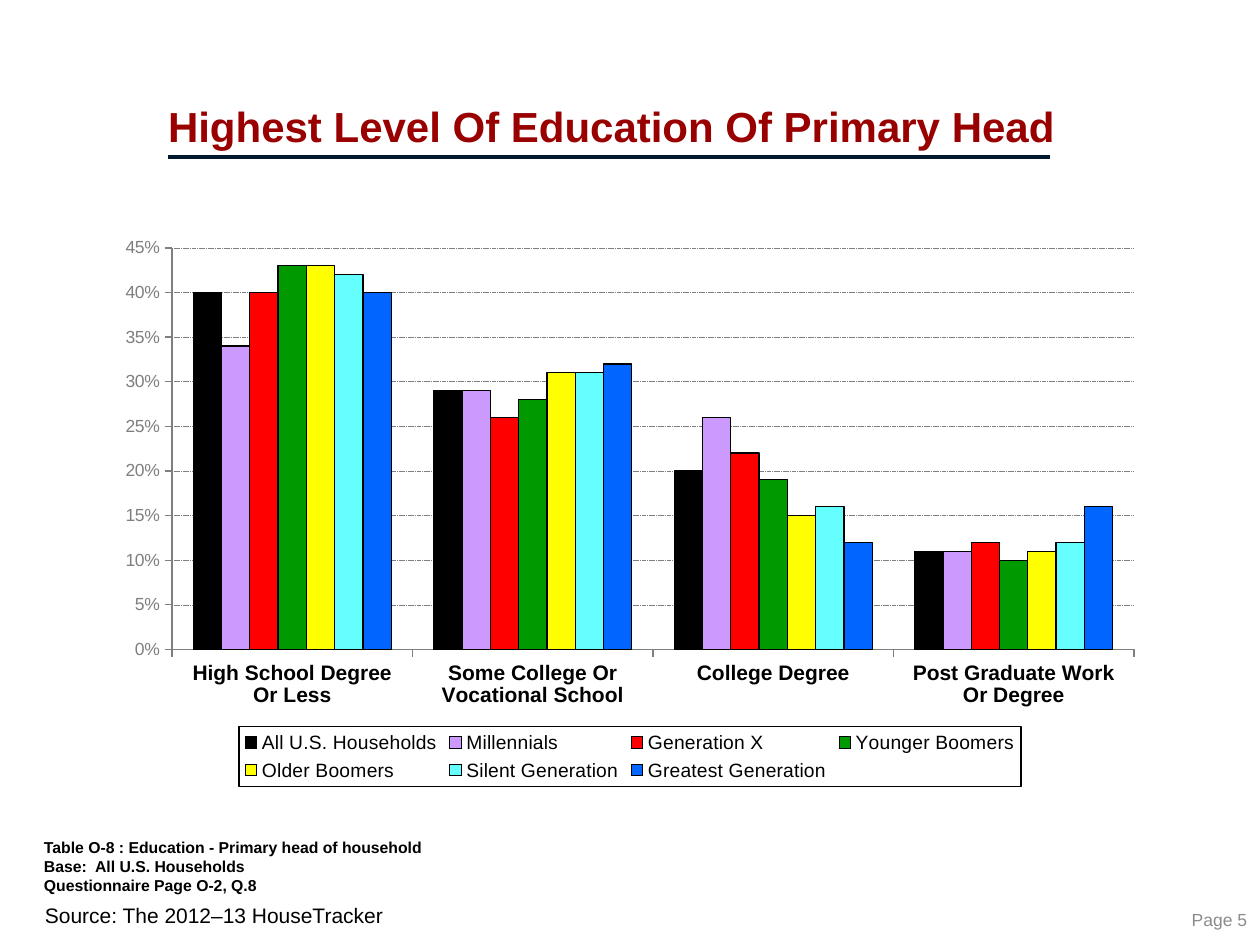
from lxml import etree
from pptx import Presentation
from pptx.chart.data import CategoryChartData
from pptx.dml.color import RGBColor
from pptx.enum.chart import XL_CHART_TYPE as Kind, XL_LEGEND_POSITION as Spot, XL_TICK_MARK as Tick
from pptx.enum.dml import MSO_LINE as Dash
from pptx.enum.shapes import MSO_CONNECTOR as Link
from pptx.enum.text import MSO_ANCHOR as Anchor, MSO_AUTO_SIZE as Fit, PP_ALIGN as Align
from pptx.oxml.ns import qn
from pptx.util import Emu, Pt

FONT = "Arial"
HUES = {"title": "990000", "rule": "00192F", "text": "000000", "axis": "7F7F7F", "page": "8C8C8C"}
TITLE = "Highest Level Of Education Of Primary Head"
NOTES = [
    "Table O-8 : Education - Primary head of household",
    "Base:  All U.S. Households",
    "Questionnaire Page O-2, Q.8",
]
SOURCE = "Source: The 2012–13 HouseTracker"
PAGE = "Page 5"
CATS = [
    "High School Degree Or Less",
    "Some College Or Vocational School",
    "College Degree",
    "Post Graduate Work Or Degree",
]
SERIES = [
    ("All U.S. Households", "000000", (0.40, 0.29, 0.20, 0.11)),
    ("Millennials", "CC99FF", (0.34, 0.29, 0.26, 0.11)),
    ("Generation X", "FF0000", (0.40, 0.26, 0.22, 0.12)),
    ("Younger Boomers", "009900", (0.43, 0.28, 0.19, 0.10)),
    ("Older Boomers", "FFFF00", (0.43, 0.31, 0.15, 0.11)),
    ("Silent Generation", "66FFFF", (0.42, 0.31, 0.16, 0.12)),
    ("Greatest Generation", "0066FF", (0.40, 0.32, 0.12, 0.16)),
]
CHART = (105, 228, 1050, 559)
PLOT = (172, 248, 962, 402)
LEGEND = (239, 727, 782, 60)
SCALE = 914400 / 126


def px(*nums):
    return [Emu(round(n * SCALE)) for n in nums]


def hue(code):
    return RGBColor.from_string(code)


def style(font, size, color, bold=False):
    font.name, font.size, font.bold = FONT, Pt(size), bold
    font.color.rgb = hue(color)


def stroke(line, color, width):
    line.color.rgb = hue(color)
    line.width = Pt(width)


def write(box, text, size, color, bold=False, wrap=True, anchor=Anchor.TOP,
          align=Align.LEFT, pads=(13, 6, 13, 6)):
    frame = box.text_frame
    frame.text = text
    frame.auto_size = Fit.NONE
    frame.word_wrap = wrap
    frame.vertical_anchor = anchor
    (frame.margin_left, frame.margin_top,
     frame.margin_right, frame.margin_bottom) = px(*pads)
    para = frame.paragraphs[0]
    para.alignment = align
    for run in para.runs:
        style(run.font, size, color, bold)
    return para


def place(part, area, inner=False):
    for old in part.findall(qn("c:layout")):
        part.remove(old)
    layout = etree.Element(qn("c:layout"))
    manual = etree.SubElement(layout, qn("c:manualLayout"))
    x, y, w, h = CHART
    rules = [("layoutTarget", "inner")] if inner else []
    rules += [("xMode", "edge"), ("yMode", "edge")]
    rules += zip("xywh", ((area[0] - x) / w, (area[1] - y) / h, area[2] / w, area[3] / h))
    for tag, val in rules:
        etree.SubElement(manual, qn("c:" + tag)).set("val", str(val))
    part.insert(0 if inner else 1, layout)


def draw(slide):
    data = CategoryChartData(number_format="0%")
    data.categories = CATS
    for name, _, vals in SERIES:
        data.add_series(name, vals)
    chart = slide.shapes.add_chart(Kind.COLUMN_CLUSTERED, *px(*CHART), data).chart
    chart.has_title = False
    style(chart.font, 10, HUES["text"])

    plot = chart.plots[0]
    plot.gap_width, plot.overlap, plot.vary_by_categories = 150, 0, False
    for bar, (_, color, _) in zip(plot.series, SERIES):
        bar.format.fill.solid()
        bar.format.fill.fore_color.rgb = hue(color)
        bar.invert_if_negative = False
        stroke(bar.format.line, HUES["text"], 0.75)

    cat, val = chart.category_axis, chart.value_axis
    style(cat.tick_labels.font, 12, HUES["text"], True)
    style(val.tick_labels.font, 10, HUES["axis"])
    for axis in (cat, val):
        axis.major_tick_mark = Tick.OUTSIDE
        stroke(axis.format.line, HUES["axis"], 0.75)
    val.minimum_scale, val.maximum_scale, val.major_unit = 0, 0.45, 0.05
    val.tick_labels.number_format = "0%"
    val.tick_labels.number_format_is_linked = False
    grid = val.major_gridlines.format.line
    stroke(grid, HUES["axis"], 0.25)
    grid.dash_style = Dash.SQUARE_DOT

    chart.has_legend = True
    key = chart.legend
    key.position, key.include_in_layout = Spot.BOTTOM, False
    style(key.font, 11, HUES["text"])
    root = chart.element
    place(root.find(".//" + qn("c:plotArea")), PLOT, True)
    node = root.find(".//" + qn("c:legend"))
    place(node, LEGEND)
    frame = etree.Element(qn("c:spPr"))
    line = etree.SubElement(frame, qn("a:ln"), w=str(Pt(0.75)))
    fill = etree.SubElement(line, qn("a:solidFill"))
    etree.SubElement(fill, qn("a:srgbClr"), val=HUES["text"])
    node.find(qn("c:txPr")).addprevious(frame)


def main():
    deck = Presentation()
    deck.slide_width, deck.slide_height = px(1260, 945)
    slide = deck.slides.add_slide(deck.slide_layouts[5])
    shapes = slide.shapes

    title = shapes.title
    title.left, title.top, title.width, title.height = px(168, 10, 903, 147)
    para = write(title, TITLE, 24, HUES["title"], True, anchor=Anchor.BOTTOM, pads=(0, 6, 0, 6))
    para.line_spacing = 0.8

    rule = shapes.add_connector(Link.STRAIGHT, *px(168, 157, 1050, 157))
    stroke(rule.line, HUES["rule"], 2)
    etree.SubElement(rule.element.spPr, qn("a:effectLst"))

    draw(slide)

    write(shapes.add_textbox(*px(32, 897, 1081, 38)), SOURCE, 12, HUES["text"])
    write(shapes.add_textbox(*px(1167, 902, 93, 34)), PAGE, 10, HUES["page"],
          wrap=False, anchor=Anchor.MIDDLE, align=Align.RIGHT)
    write(shapes.add_textbox(*px(0, 809, 885, 102)), "\v".join(NOTES), 9, HUES["text"], True,
          wrap=False, anchor=Anchor.BOTTOM, pads=(44, 16, 0, 16))
    deck.save("out.pptx")


if __name__ == "__main__":
    main()
